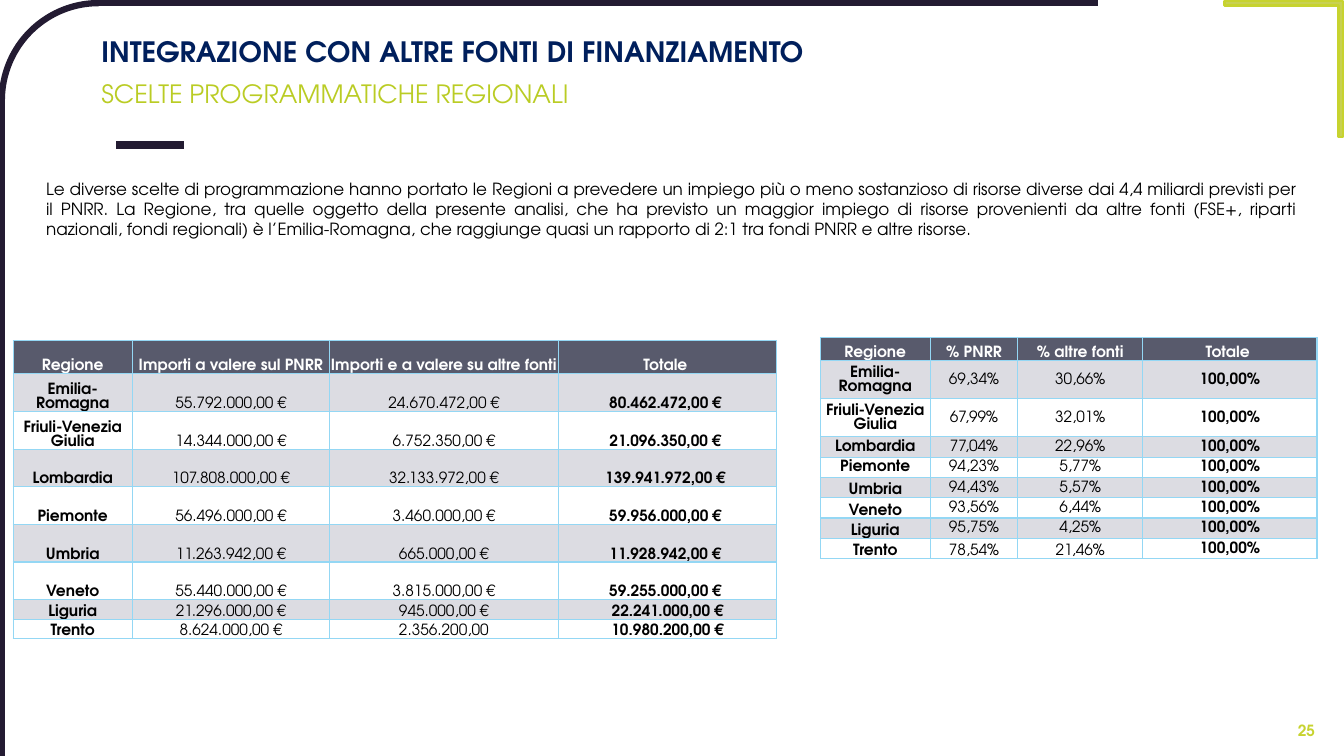
import pptx
import pptx.dml.color
import pptx.enum.shapes
import pptx.enum.text
import pptx.oxml
import pptx.oxml.ns
import pptx.util

Pt = pptx.util.Pt
ALIGN = pptx.enum.text.PP_ALIGN
ANCHOR = pptx.enum.text.MSO_ANCHOR
SHAPE = pptx.enum.shapes.MSO_SHAPE
FONT = "TeX Gyre Adventor"
DARK, LIME = "231B32", "C7D32F"
HEADER, BAND, WHITE, BLACK, BORDER = "585A6C", "DCDCE2", "FFFFFF", "000000", "94D7F4"

INTRO = (
    "Le diverse scelte di programmazione hanno portato le Regioni a prevedere un impiego più o meno "
    "sostanzioso di risorse diverse dai 4,4 miliardi previsti per il PNRR. La Regione, tra quelle oggetto "
    "della presente analisi, che ha previsto un maggior impiego di risorse provenienti da altre fonti "
    "(FSE+, riparti nazionali, fondi regionali) è l’Emilia-Romagna, che raggiunge quasi un rapporto "
    "di 2:1 tra fondi PNRR e altre risorse."
)
AMOUNTS = [
    ("Regione", "Importi a valere sul PNRR", "Importi e a valere su altre fonti", "Totale "),
    ("Emilia-Romagna", "55.792.000,00 €", "24.670.472,00 €", "80.462.472,00 € "),
    ("Friuli-Venezia Giulia", "14.344.000,00 €", "6.752.350,00 €", "21.096.350,00 € "),
    ("Lombardia", "107.808.000,00 €", "32.133.972,00 €", "139.941.972,00 € "),
    ("Piemonte", "56.496.000,00 €", "3.460.000,00 €", "59.956.000,00 € "),
    ("Umbria", "11.263.942,00 €", "665.000,00 €", "11.928.942,00 € "),
    ("Veneto", "55.440.000,00 €", "3.815.000,00 €", "59.255.000,00 € "),
    ("Liguria", "21.296.000,00 €", "945.000,00 €", "22.241.000,00 €"),
    ("Trento", "8.624.000,00 €", "2.356.200,00", "10.980.200,00 €"),
]
SHARES = [
    ("Regione", "% PNRR", "% altre fonti", "Totale "),
    ("Emilia-Romagna", "69,34%", "30,66%", "100,00%"),
    ("Friuli-Venezia Giulia", "67,99%", "32,01%", "100,00%"),
    ("Lombardia", "77,04%", "22,96%", "100,00%"),
    ("Piemonte", "94,23%", "5,77%", "100,00%"),
    ("Umbria", "94,43%", "5,57%", "100,00%"),
    ("Veneto", "93,56%", "6,44%", "100,00%"),
    ("Liguria", "95,75%", "4,25%", "100,00%"),
    ("Trento", "78,54%", "21,46%", "100,00%"),
]


def colour(value):
    """Return the colour for a hex string."""
    return pptx.dml.color.RGBColor.from_string(value)


def write(para, text, size, ink, bold=False, align=ALIGN.LEFT):
    """Add one formatted run to a paragraph."""
    para.alignment = align
    span = para.add_run()
    span.text = text
    span.font.name = FONT
    span.font.size = Pt(size)
    span.font.bold = bold
    span.font.color.rgb = colour(ink)


def add_text(page, area, text, size, ink, bold=False, align=ALIGN.LEFT):
    """Add a wrapping text box."""
    box = page.shapes.add_textbox(*map(Pt, area))
    box.text_frame.word_wrap = True
    write(box.text_frame.paragraphs[0], text, size, ink, bold, align)


def add_line(page, start, end, width):
    """Add a straight dark line without shadow."""
    kind = pptx.enum.shapes.MSO_CONNECTOR.STRAIGHT
    line = page.shapes.add_connector(kind, *map(Pt, start + end))
    line.line.color.rgb = colour(DARK)
    line.line.width = Pt(width)
    line._element.spPr.append(pptx.oxml.parse_xml(f"<a:effectLst {pptx.oxml.ns.nsdecls('a')}/>"))


def add_shape(page, kind, area, rotation, ink, width):
    """Add a rotated, outlined shape without fill."""
    shape = page.shapes.add_shape(kind, *map(Pt, area))
    shape.shadow.inherit = False
    shape.rotation = rotation
    shape.fill.background()
    shape.line.color.rgb = colour(ink)
    shape.line.width = Pt(width)
    return shape


def add_borders(cell):
    """Draw the four borders of a table cell."""
    for side in ("lnL", "lnR", "lnT", "lnB"):
        cell._tc.get_or_add_tcPr().append(pptx.oxml.parse_xml(
            f'<a:{side} {pptx.oxml.ns.nsdecls("a")} w="{Pt(1)}"><a:solidFill>'
            f'<a:srgbClr val="{BORDER}"/></a:solidFill></a:{side}>'))


def fill_cell(cell, text, fill, ink, bold, anchor):
    """Format a table cell and write its text."""
    add_borders(cell)
    cell.fill.solid()
    cell.fill.fore_color.rgb = colour(fill)
    cell.margin_left = cell.margin_right = cell.margin_top = Pt(0.5)
    cell.margin_bottom = Pt(0)
    cell.vertical_anchor = anchor
    write(cell.text_frame.paragraphs[0], text, 11, ink, bold, ALIGN.CENTER)


def add_region_table(page, left, top, widths, heights, rows, is_bottom):
    """Add a banded table of regions with bold names and totals."""
    area = (left, top, sum(widths), sum(heights))
    table = page.shapes.add_table(len(rows), len(widths), *map(Pt, area)).table
    table.first_row = table.horz_banding = False
    for column, width in zip(table.columns, widths):
        column.width = Pt(width)
    for r, values in enumerate(rows):
        table.rows[r].height = Pt(heights[r])
        fill = HEADER if r == 0 else BAND if r % 2 else WHITE
        for c, text in enumerate(values):
            anchor = ANCHOR.BOTTOM if is_bottom(r, c) else ANCHOR.MIDDLE
            bold = r == 0 or c in (0, 3)
            fill_cell(table.cell(r, c), text, fill, BLACK if r else WHITE, bold, anchor)


def add_frame(page):
    """Add the decorative page frame and the title rule."""
    corner = add_shape(page, SHAPE.CORNER, (874.8, 0.7, 85, 97.2), 180, LIME, 2)
    corner.adjustments[0] = corner.adjustments[1] = 0.04
    corner.fill.solid()
    corner.fill.fore_color.rgb = colour("C8D152")
    add_line(page, (1.4, 70.6), (1.4, 540), 4.5)
    add_line(page, (67, 2.2), (784.4, 2.2), 4.5)
    add_shape(page, SHAPE.ARC, (0.9, 2.6, 139, 138.2), 270, DARK, 4.5)
    add_line(page, (83, 103.7), (131.8, 103.7), 6)


def main():
    """Build the slide and save the deck."""
    deck = pptx.Presentation()
    deck.slide_width, deck.slide_height = Pt(960.5), Pt(540)
    page = deck.slides.add_slide(deck.slide_layouts[6])
    add_frame(page)
    add_text(page, (907, 511.5, 53.3, 21), "25", 11, LIME, True, ALIGN.CENTER)
    add_text(page, (65.3, 20.9, 844.6, 38.9), "INTEGRAZIONE CON ALTRE FONTI DI FINANZIAMENTO",
             20, "001F5C", True)
    add_text(page, (25.9, 123.8, 908.6, 51), INTRO, 12, BLACK, align=ALIGN.JUSTIFY)
    add_text(page, (65.3, 52.6, 481, 28.8), "SCELTE PROGRAMMATICHE REGIONALI", 18, "BACC24")
    add_region_table(page, 9.5, 243.3, (85, 141.1, 163.4, 156.2), [23.7] + [26.9] * 6 + [13.9] * 2,
                     AMOUNTS, lambda r, c: True)
    add_region_table(page, 586.3, 241.2, (78.5, 62.6, 89.3, 124.6), [16.5] + [27.2] * 2 + [14.5] * 6,
                     SHARES, lambda r, c: r == 0 or (r > 4 and c == 0) or (r == 8 and c < 3))
    deck.save("out.pptx")


if __name__ == "__main__":
    main()
